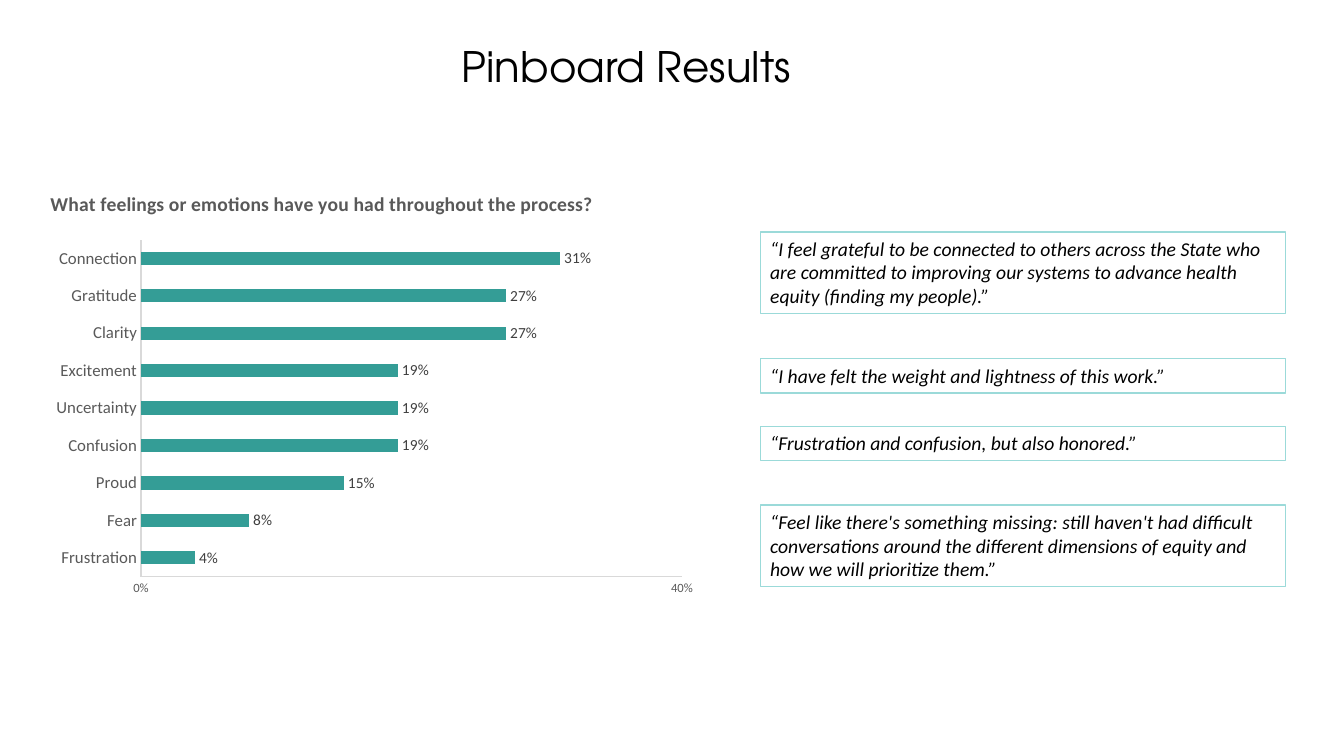
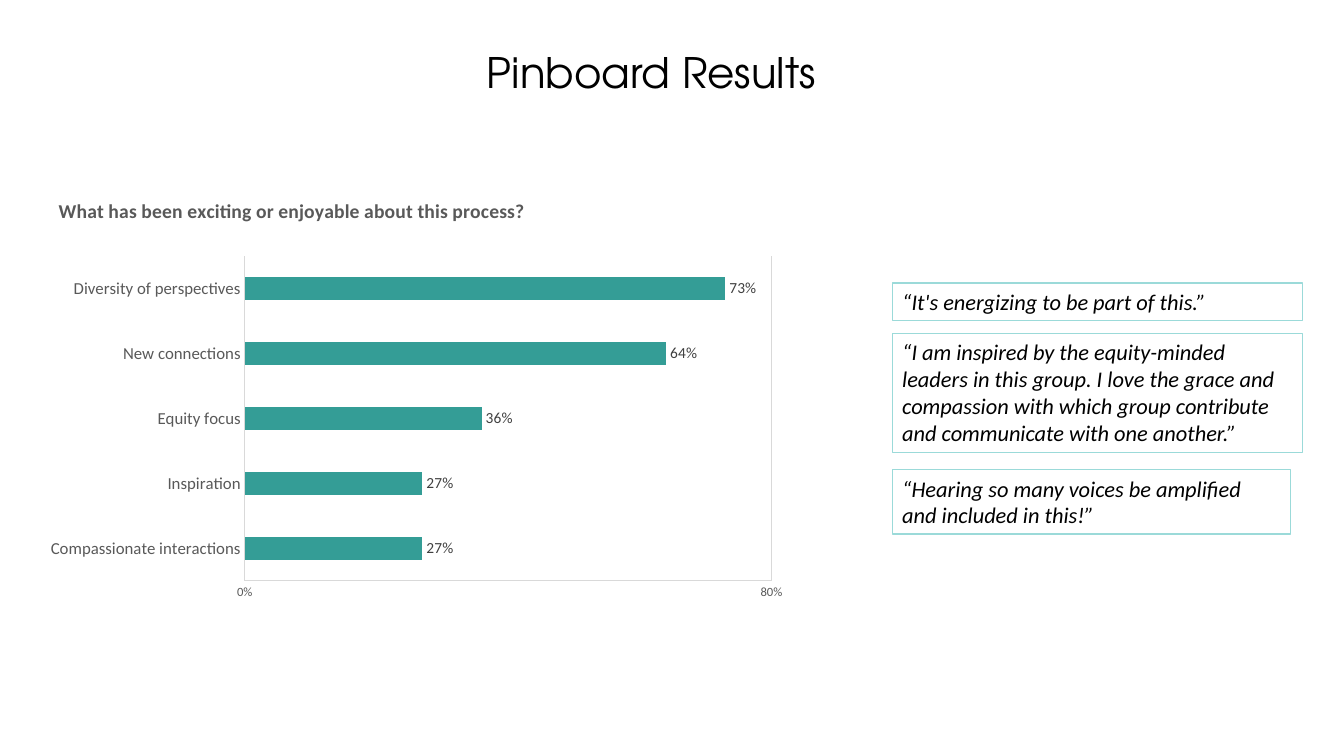
from lxml import etree
from pptx import Presentation
from pptx.chart.data import CategoryChartData
from pptx.dml.color import RGBColor
from pptx.enum.chart import XL_CHART_TYPE, XL_LABEL_POSITION, XL_TICK_MARK
from pptx.enum.shapes import MSO_SHAPE
from pptx.enum.text import MSO_ANCHOR, MSO_AUTO_SIZE, PP_ALIGN
from pptx.oxml.ns import qn
from pptx.util import Inches, Pt

BAR = XL_CHART_TYPE.BAR_CLUSTERED
OUTSIDE = XL_LABEL_POSITION.OUTSIDE_END
NO_TICK = XL_TICK_MARK.NONE
RECT = MSO_SHAPE.RECTANGLE

BLACK = RGBColor(0x00, 0x00, 0x00)
WHITE = RGBColor(0xFF, 0xFF, 0xFF)
TEAL = RGBColor(0x34, 0x9D, 0x96)
PALE_TEAL = RGBColor(0x9B, 0xDA, 0xD9)
GRAY = RGBColor(0x59, 0x59, 0x59)
DARK_GRAY = RGBColor(0x40, 0x40, 0x40)
LIGHT_GRAY = RGBColor(0xD9, 0xD9, 0xD9)

BODY_FONT = "Calibri"
TITLE_FONT = "TeX Gyre Adventor"
TITLE = "Pinboard Results"

# Quotes are (top, width, height, text)
SLIDES = [
    dict(
        title_at=(4.48, 0.42),
        chart_at=(0.39, 1.62, 7.36, 4.65),
        question="What feelings or emotions have you had throughout the process?",
        question_at=dict(x=0.01, y=0.05),
        plot_at=dict(x=0.137, y=0.163, w=0.729, h=0.719),
        axis_max=0.4,
        gridlines=False,
        answers={
            "Frustration": 0.04, "Fear": 0.08, "Proud": 0.15,
            "Confusion": 0.19, "Uncertainty": 0.19, "Excitement": 0.19,
            "Clarity": 0.27, "Gratitude": 0.27, "Connection": 0.31,
        },
        quote_left=7.54,
        quote_size=14,
        quotes=[
            (2.3, 5.21, 0.81, "“I feel grateful to be connected to others across the State who "
             "are committed to improving our systems to advance health equity "
             "(finding my people).”"),
            (3.56, 5.21, 0.34, "“I have felt the weight and lightness of this work.”"),
            (4.23, 5.21, 0.34, "“Frustration and confusion, but also honored.”"),
            (5.01, 5.21, 0.81, "“Feel like there's something missing: still haven't had difficult "
             "conversations around the different dimensions of equity and how we "
             "will prioritize them.”"),
        ],
    ),
    dict(
        title_at=(4.73, 0.48),
        chart_at=(0.28, 1.77, 7.81, 4.46),
        question="What has been exciting or enjoyable about this process?",
        question_at=dict(x=0.034, y=0.035),
        plot_at=dict(x=0.275, y=0.173, w=0.669, h=0.722),
        axis_max=0.8,
        gridlines=True,
        answers={
            "Compassionate interactions": 0.27, "Inspiration": 0.27,
            "Equity focus": 0.36, "New connections": 0.64,
            "Diversity of perspectives": 0.73,
        },
        quote_left=8.85,
        quote_size=16,
        quotes=[
            (2.81, 4.07, 0.37, "“It's energizing to be part of this.”"),
            (3.31, 4.07, 1.18, "“I am inspired by the equity-minded leaders in this group. I love "
             "the grace and compassion with which group contribute and "
             "communicate with one another.”"),
            (4.66, 3.95, 0.64, "“Hearing so many voices be amplified and included in this!”"),
        ],
    ),
]


def style_font(font, size, color, name=BODY_FONT):
    font.size = Pt(size)
    font.name = name
    font.color.rgb = color


def set_layout(parent, index, fractions, inner=False):
    """Place a chart part by fractions of the chart's size."""
    for old in parent.findall(qn("c:layout")):
        parent.remove(old)
    layout = etree.Element(qn("c:layout"))
    manual = etree.SubElement(layout, qn("c:manualLayout"))
    if inner:
        etree.SubElement(manual, qn("c:layoutTarget")).set("val", "inner")
    for key in "xy":
        etree.SubElement(manual, qn(f"c:{key}Mode")).set("val", "edge")
    for key, value in fractions.items():
        etree.SubElement(manual, qn(f"c:{key}")).set("val", str(value))
    parent.insert(index, layout)


prs = Presentation()
prs.slide_width = Inches(13.33)
prs.slide_height = Inches(7.5)

for content in SLIDES:
    s = prs.slides.add_slide(prs.slide_layouts[6])

    # Bar chart
    data = CategoryChartData(number_format="0%")
    data.categories = list(content["answers"])
    data.add_series("Series 1", list(content["answers"].values()))
    frame = s.shapes.add_chart(BAR, *map(Inches, content["chart_at"]), data)
    chart = frame.chart
    chart.has_legend = False
    style_font(chart.font, 10, BLACK)

    # Chart title and plot placement
    chart.has_title = True
    p = chart.chart_title.text_frame.paragraphs[0]
    p.text = content["question"]
    style_font(p.font, 14, GRAY)
    p.font.bold = True
    chart_xml = chart.element
    set_layout(chart_xml.find(".//" + qn("c:title")), 1, content["question_at"])
    set_layout(chart_xml.find(".//" + qn("c:plotArea")), 0, content["plot_at"], inner=True)

    # Bars and value labels
    plot = chart.plots[0]
    plot.gap_width = 182
    plot.vary_by_categories = False
    fill = plot.series[0].format.fill
    fill.solid()
    fill.fore_color.rgb = TEAL
    plot.has_data_labels = True
    labels = plot.data_labels
    labels.show_value = True
    labels.position = OUTSIDE
    labels.number_format = "0%"
    labels.number_format_is_linked = False
    style_font(labels.font, 11, DARK_GRAY)

    # Axes
    for axis, size in ((chart.category_axis, 12), (chart.value_axis, 9)):
        axis.major_tick_mark = axis.minor_tick_mark = NO_TICK
        style_font(axis.tick_labels.font, size, GRAY)
        axis.format.line.color.rgb = LIGHT_GRAY
        axis.format.line.width = Pt(0.75)
    value_axis = chart.value_axis
    value_axis.minimum_scale = 0
    value_axis.maximum_scale = value_axis.major_unit = content["axis_max"]
    value_axis.tick_labels.number_format = "0%"
    value_axis.tick_labels.number_format_is_linked = False
    value_axis.has_major_gridlines = content["gridlines"]
    if content["gridlines"]:
        chart.category_axis.format.line.fill.background()
        grid = value_axis.major_gridlines.format.line
        grid.color.rgb = LIGHT_GRAY
        grid.width = Pt(0.75)

    # Quotes
    for top, width, height, quote in content["quotes"]:
        sp = s.shapes.add_shape(RECT, Inches(content["quote_left"]), Inches(top),
                                Inches(width), Inches(height))
        sp.shadow.inherit = False
        sp.fill.solid()
        sp.fill.fore_color.rgb = WHITE
        sp.line.color.rgb = PALE_TEAL
        sp.line.width = Pt(1)
        tf = sp.text_frame
        tf.word_wrap = True
        tf.auto_size = MSO_AUTO_SIZE.SHAPE_TO_FIT_TEXT
        tf.vertical_anchor = MSO_ANCHOR.TOP
        p = tf.paragraphs[0]
        p.text = quote
        p.alignment = PP_ALIGN.LEFT
        style_font(p.font, content["quote_size"], BLACK)
        p.font.italic = True

    # Slide title
    left, top = content["title_at"]
    sp = s.shapes.add_textbox(Inches(left), Inches(top), Inches(5.34), Inches(0.53))
    tf = sp.text_frame
    tf.word_wrap = True
    tf.vertical_anchor = MSO_ANCHOR.MIDDLE
    p = tf.paragraphs[0]
    p.text = TITLE
    p.line_spacing = 0.9
    style_font(p.font, 30, BLACK, TITLE_FONT)

prs.save("out.pptx")
